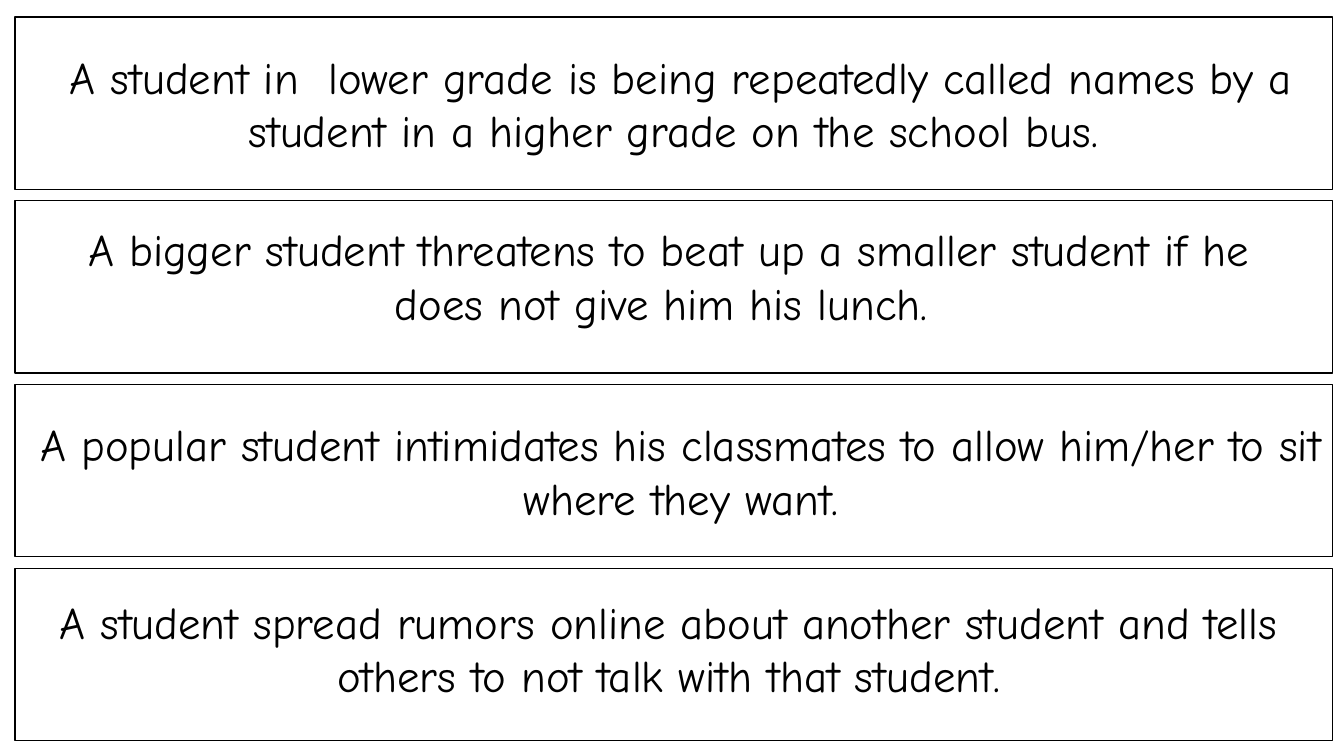
from pptx import Presentation
from pptx.dml.color import RGBColor
from pptx.enum.shapes import MSO_SHAPE as Preset
from pptx.enum.text import MSO_AUTO_SIZE as AutoSize, PP_ALIGN as Align
from pptx.util import Cm, Pt

BLACK = RGBColor(0x00, 0x00, 0x00)
WHITE = RGBColor(0xFF, 0xFF, 0xFF)

CARD_LEFT, CARD_TOP = 0.38, 0.43
CARD_WIDTH, CARD_HEIGHT = 33.2, 4.34
CARD_PITCH = 4.63
TEXT_HEIGHT = 3.0

SCENARIO_FONT = {"name": "Comic Neue", "size": Pt(32)}

# Wording, then the text's left and top offsets in its card and its width, in cm
SCENARIOS = [
    ("A student in  lower grade is being repeatedly called names by a "
     "student in a higher grade on the school bus. ", 0.69, 0.69, 32.2),
    ("A bigger student threatens to beat up a smaller student if he "
     "does not give him his lunch. ", 0.38, 0.41, 32.2),
    ("A popular student intimidates his classmates to allow him/her to sit "
     "where they want.", 0.23, 0.69, 33.12),
    ("A student spread rumors online about another student and tells "
     "others to not talk with that student.", 0.38, 0.53, 32.2),
]


def add_card_frame(slide, left, top, width, height):
    frame = slide.shapes.add_shape(
        Preset.RECTANGLE, Cm(left), Cm(top), Cm(width), Cm(height))
    frame.shadow.inherit = False
    frame.fill.solid()
    frame.fill.fore_color.rgb = WHITE
    frame.line.color.rgb = BLACK
    frame.line.width = Pt(1)


def add_scenario(slide, wording, left, top, width):
    scenario = slide.shapes.add_textbox(
        Cm(left), Cm(top), Cm(width), Cm(TEXT_HEIGHT)).text_frame
    scenario.word_wrap = True
    scenario.auto_size = AutoSize.SHAPE_TO_FIT_TEXT
    paragraph = scenario.paragraphs[0]
    paragraph.alignment = Align.CENTER
    run = paragraph.add_run()
    run.text = wording
    for attribute, value in SCENARIO_FONT.items():
        setattr(run.font, attribute, value)
    run.font.color.rgb = BLACK


def build_scenario_cards(slide, left, top):
    """Stack one framed card per scenario, downwards from the given corner."""
    for row, (wording, indent, drop, text_width) in enumerate(SCENARIOS):
        card_top = top + row * CARD_PITCH
        add_card_frame(slide, left, card_top, CARD_WIDTH, CARD_HEIGHT)
        add_scenario(slide, wording, left + indent, card_top + drop, text_width)


def main():
    deck = Presentation()
    deck.slide_width, deck.slide_height = Cm(33.87), Cm(19.05)
    blank_layout = deck.slide_layouts[6]
    build_scenario_cards(deck.slides.add_slide(blank_layout), CARD_LEFT, CARD_TOP)
    deck.save("out.pptx")


if __name__ == "__main__":
    main()
